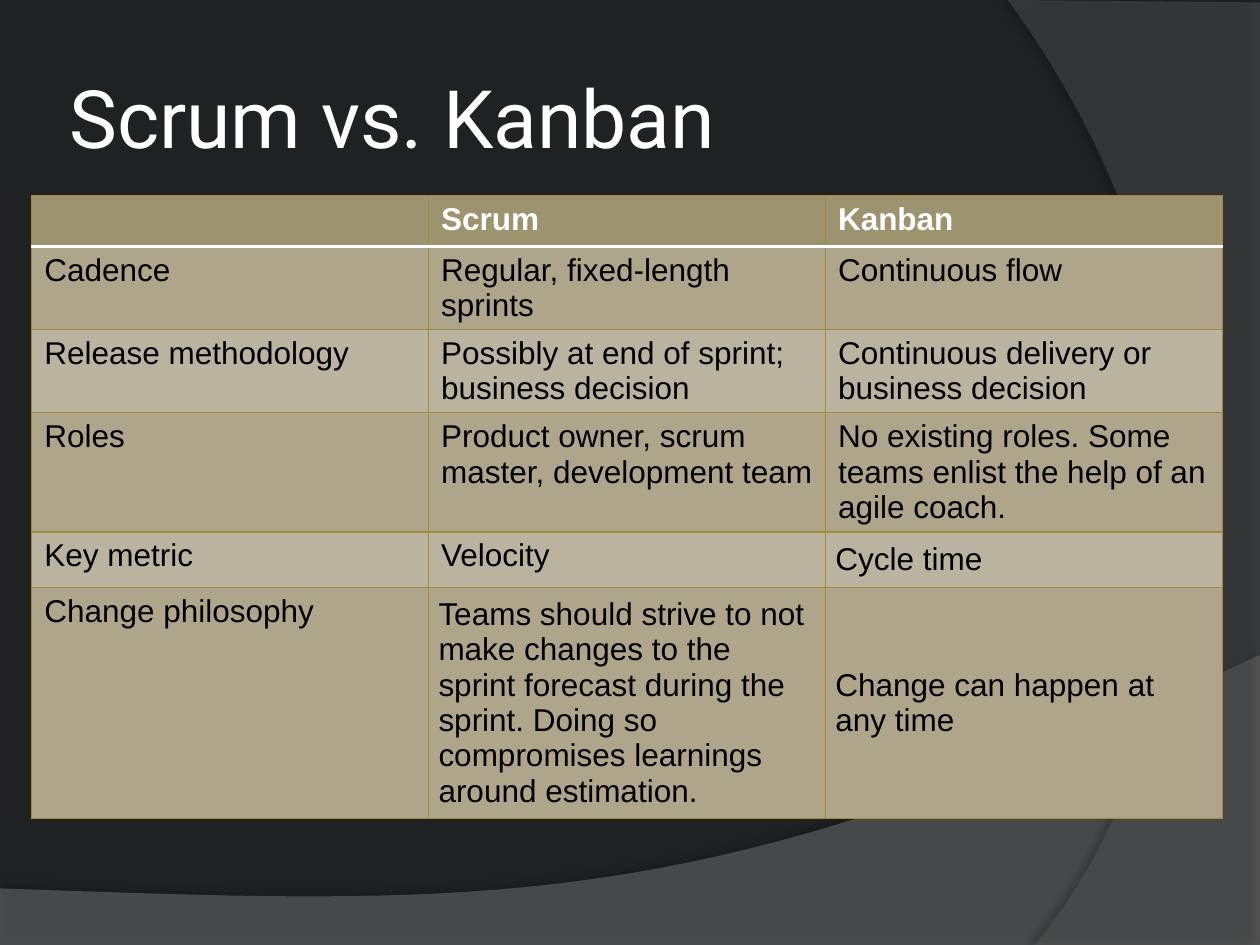
from dataclasses import dataclass

from lxml.etree import SubElement
from pptx import Presentation
from pptx.dml.color import RGBColor as Rgb
from pptx.enum.text import MSO_ANCHOR as Anchor, PP_ALIGN as Align
from pptx.oxml import parse_xml
from pptx.oxml.ns import nsdecls, qn
from pptx.util import Cm, Pt

Point = tuple[float, float]


@dataclass(frozen=True)
class Theme:
    background: str = "1F2123"
    light: str = "FFFFFF"
    dark: str = "000000"
    header: str = "9D936F"
    odd_row: str = "AEA58B"
    even_row: str = "BAB3A0"
    border: str = "A38B34"
    title_font: str = "Roboto"
    body_font: str = "Arial"
    title_size: float = 46
    body_size: float = 18


@dataclass(frozen=True)
class Swoosh:
    """A filled area: straight corners, then a cubic curve from the last corner."""
    corners: list[Point]
    curve: tuple[Point, Point, Point]
    colour: str
    opacity: int
    shadow_opacity: int
    shadow_distance: float
    shadow_angle: int


@dataclass(frozen=True)
class Entry:
    text: str
    padding: tuple[float, float] | None = None  # left and right, in cm
    anchor: Anchor = Anchor.TOP


@dataclass(frozen=True)
class Row:
    height: float
    entries: tuple[Entry, Entry, Entry]


THEME = Theme()
WIDTH, HEIGHT = 25.4, 19.05
COLUMN_WIDTH = 8.0
PADDING = 0.2

SWOOSHES = [
    Swoosh([(0, 17.91), (0, HEIGHT), (WIDTH, HEIGHT), (WIDTH, 13.2)],
           ((14.2, 18.52), (9.93, 18.26), (0, 17.91)), "7F7F7F", 45, 35, 3.5, 270),
    Swoosh([(WIDTH, 0.05), (WIDTH, HEIGHT), (20.85, HEIGHT)],
           ((23.75, 15.72), (25.86, 7.62), (20.32, 0)), "5E5E5E", 40, 45, 4, 180),
]

ROWS = [
    Row(1.03, (Entry(""), Entry("Scrum"), Entry("Kanban"))),
    Row(1.67, (Entry("Cadence"), Entry("Regular, fixed-length sprints"),
               Entry("Continuous flow"))),
    Row(1.67, (Entry("Release methodology"),
               Entry("Possibly at end of sprint; business decision"),
               Entry("Continuous delivery or business decision"))),
    Row(2.4, (Entry("Roles"), Entry("Product owner, scrum master, development team"),
              Entry("No existing roles. Some teams enlist the help of an agile coach."))),
    Row(1.1, (Entry("Key metric"), Entry("Velocity"),
              Entry("Cycle time", (PADDING, 0.25), Anchor.MIDDLE))),
    Row(4.65, (Entry("Change philosophy"),
               Entry("Teams should strive to not make changes to the sprint forecast during "
                     "the sprint. Doing so compromises learnings around estimation.",
                     (PADDING, PADDING), Anchor.MIDDLE),
               Entry("Change can happen at any time", (PADDING, 0.25), Anchor.MIDDLE))),
]


def write(frame, text: str, *, font: str, size: float, colour: str, bold: bool = False) -> None:
    paragraph = frame.paragraphs[0]
    paragraph.alignment = Align.LEFT
    run = paragraph.add_run()
    run.text = text
    run.font.name, run.font.size, run.font.bold = font, Pt(size), bold
    run.font.color.rgb = Rgb.from_string(colour)


def curve_points(start: Point, curve: tuple[Point, Point, Point], steps: int = 40) -> list[Point]:
    def at(t: float, axis: int) -> float:
        a, b, c, d = (point[axis] for point in (start, *curve))
        u = 1 - t
        return u**3 * a + 3 * u * u * t * b + 3 * u * t * t * c + t**3 * d

    return [(at(i / steps, 0), at(i / steps, 1)) for i in range(1, steps + 1)]


def draw_swoosh(slide, swoosh: Swoosh) -> None:
    outline = swoosh.corners + curve_points(swoosh.corners[-1], swoosh.curve)
    first, *rest = [(Cm(x), Cm(y)) for x, y in outline]
    builder = slide.shapes.build_freeform(*first)
    builder.add_line_segments(rest, close=True)
    area = builder.convert_to_shape()
    area.fill.solid()
    area.fill.fore_color.rgb = Rgb.from_string(swoosh.colour)
    area.line.fill.background()
    properties = area._element.spPr
    colour = properties.find(qn("a:solidFill"))[0]
    SubElement(colour, qn("a:alpha"), val=str(swoosh.opacity * 1000))
    properties.append(parse_xml(
        f'<a:effectLst {nsdecls("a")}><a:outerShdw blurRad="{Pt(4)}" '
        f'dist="{Pt(swoosh.shadow_distance)}" dir="{swoosh.shadow_angle * 60000}" '
        f'algn="ctr" rotWithShape="0"><a:srgbClr val="{THEME.dark}">'
        f'<a:alpha val="{swoosh.shadow_opacity * 1000}"/></a:srgbClr>'
        '</a:outerShdw></a:effectLst>'))


def draw_borders(cell, row_index: int) -> None:
    """Gold on every side, with a white rule between the header and the body."""
    properties = cell._tc.get_or_add_tcPr()
    for position, side in enumerate("LRTB"):
        is_rule = (row_index, side) in ((0, "B"), (1, "T"))
        colour, weight = (THEME.light, 1.5) if is_rule else (THEME.border, 0.75)
        properties.insert(position, parse_xml(
            f'<a:ln{side} {nsdecls("a")} w="{Pt(weight)}"><a:solidFill>'
            f'<a:srgbClr val="{colour}"/></a:solidFill></a:ln{side}>'))


def fill_cell(cell, entry: Entry, row_index: int) -> None:
    is_header = row_index == 0
    band = THEME.odd_row if row_index % 2 else THEME.even_row
    cell.fill.solid()
    cell.fill.fore_color.rgb = Rgb.from_string(THEME.header if is_header else band)
    cell.vertical_anchor = entry.anchor
    if entry.padding:
        cell.margin_left, cell.margin_right = map(Cm, entry.padding)
        cell.margin_top = cell.margin_bottom = Cm(PADDING)
    if entry.text:
        write(cell.text_frame, entry.text, font=THEME.body_font, size=THEME.body_size,
              colour=THEME.light if is_header else THEME.dark, bold=is_header)
    draw_borders(cell, row_index)


def draw_comparison(slide, rows: list[Row]) -> None:
    columns = len(rows[0].entries)
    table = slide.shapes.add_table(
        len(rows), columns, Cm(0.64), Cm(3.94), Cm(COLUMN_WIDTH * columns),
        Cm(sum(row.height for row in rows))).table
    for column in table.columns:
        column.width = Cm(COLUMN_WIDTH)
    for row_index, row in enumerate(rows):
        table.rows[row_index].height = Cm(row.height)
        for column_index, entry in enumerate(row.entries):
            fill_cell(table.cell(row_index, column_index), entry, row_index)


def place_title(slide, text: str) -> None:
    title = slide.shapes.title
    title.left, title.top, title.width, title.height = map(Cm, (1.27, 0.76, 20.75, 3.18))
    frame = title.text_frame
    frame.margin_left = frame.margin_right = frame.margin_top = frame.margin_bottom = Cm(0.13)
    frame.vertical_anchor = Anchor.MIDDLE
    write(frame, text, font=THEME.title_font, size=THEME.title_size, colour=THEME.light)
    slide.shapes._spTree.append(title._element)  # in front of the swooshes


def main() -> None:
    deck = Presentation()
    deck.slide_width, deck.slide_height = Cm(WIDTH), Cm(HEIGHT)
    slide = deck.slides.add_slide(deck.slide_layouts[5])
    slide.background.fill.solid()
    slide.background.fill.fore_color.rgb = Rgb.from_string(THEME.background)
    for swoosh in SWOOSHES:
        draw_swoosh(slide, swoosh)
    place_title(slide, "Scrum vs. Kanban")
    draw_comparison(slide, ROWS)
    deck.save("out.pptx")


if __name__ == "__main__":
    main()
